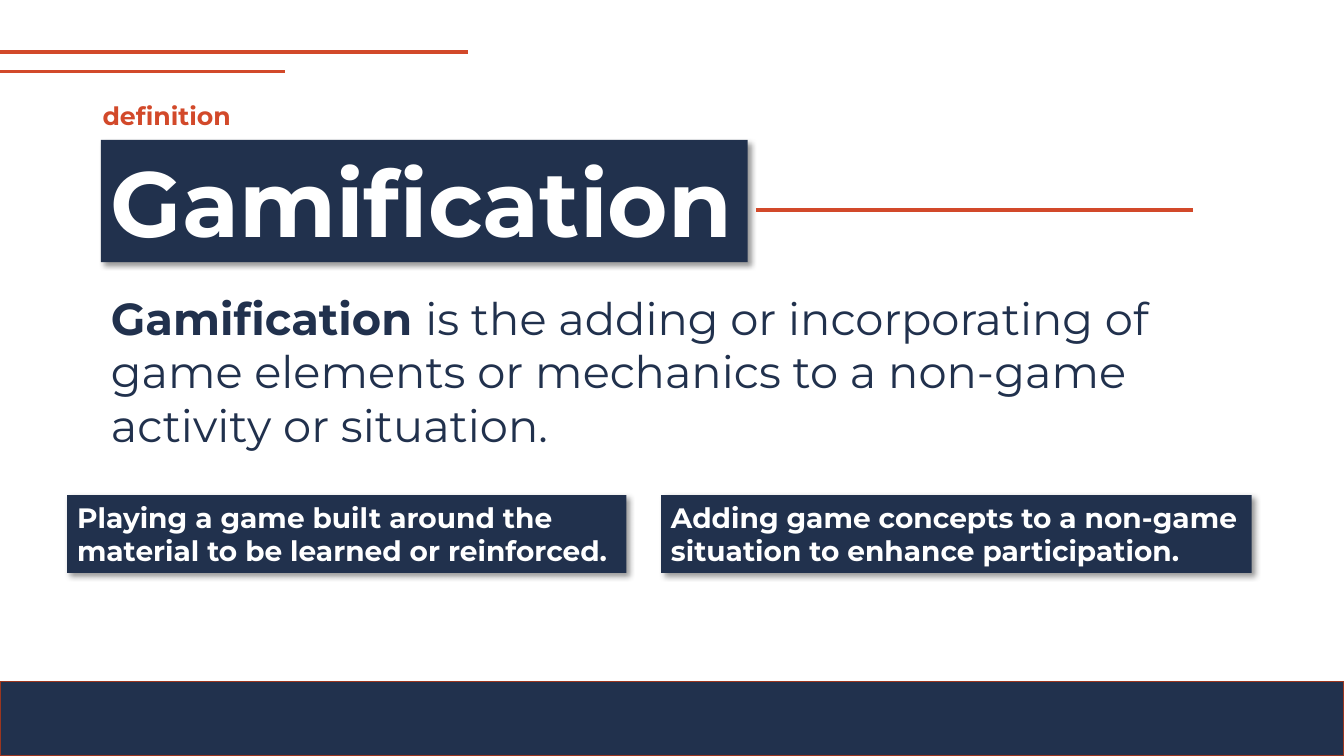
from lxml import etree
from pptx import Presentation
from pptx.dml import color
from pptx.enum import shapes, text
from pptx.oxml import ns
from pptx.util import Pt

NAVY, RED, RUST, WHITE = "21314D", "D2492A", "9B361F", "FFFFFF"
FONT = "Montserrat"


def rgb(code):
    return color.RGBColor.from_string(code)


def place(shape, box):
    shape.left, shape.top, shape.width, shape.height = (Pt(n) for n in box)


def write(shape, parts, size, tone):
    """Fill a shape with one paragraph; parts are (wording, bold) pairs."""
    frame = shape.text_frame
    frame.word_wrap = True
    frame.auto_size = text.MSO_AUTO_SIZE.NONE
    frame.vertical_anchor = text.MSO_ANCHOR.TOP
    para = frame.paragraphs[0]
    para.alignment = text.PP_ALIGN.LEFT
    para.space_before = Pt(0)
    para.line_spacing = 1.0
    for words, bold in parts:
        run = para.add_run()
        run.text = words
        run.font.name, run.font.size, run.font.bold = FONT, Pt(size), bold
        run.font.color.rgb = rgb(tone)


def paint(shape, fill):
    shape.fill.solid()
    shape.fill.fore_color.rgb = rgb(fill)
    shape.line.fill.background()
    shape.shadow.inherit = False


def shade(shape):
    """Add a soft shadow towards the lower right."""
    effects = shape._element.spPr.find(ns.qn("a:effectLst"))
    outer = etree.SubElement(effects, ns.qn("a:outerShdw"), blurRad=str(Pt(4)),
                             dist=str(Pt(3)), dir="2700000", algn="tl", rotWithShape="0")
    black = etree.SubElement(outer, ns.qn("a:srgbClr"), val="000000")
    etree.SubElement(black, ns.qn("a:alpha"), val="40000")


def panel(shape, words, size):
    paint(shape, NAVY)
    shade(shape)
    write(shape, [(words, True)], size, WHITE)


def block(slide, box):
    return slide.shapes.add_shape(shapes.MSO_SHAPE.RECTANGLE, *(Pt(n) for n in box))


def rule(slide, left, right, y, width):
    line = slide.shapes.add_connector(shapes.MSO_CONNECTOR.STRAIGHT,
                                      Pt(left), Pt(y), Pt(right), Pt(y))
    line.line.color.rgb = rgb(RED)
    line.line.width = Pt(width)
    etree.SubElement(line._element.spPr, ns.qn("a:effectLst"))


def main():
    deck = Presentation()
    deck.slide_width, deck.slide_height = Pt(960), Pt(540)
    slide = deck.slides.add_slide(deck.slide_layouts[1])
    title, body = slide.placeholders

    # Footer bar and top rules
    bar = block(slide, (0, 486.7, 960, 53.3))
    paint(bar, NAVY)
    bar.line.color.rgb = rgb(RUST)
    bar.line.width = Pt(1)
    rule(slide, 0, 334, 37.2, 2.5)
    rule(slide, 0, 203.6, 51.3, 2)

    # Label, title and the rule beside it
    label = slide.shapes.add_textbox(Pt(66.2), Pt(68.4), Pt(108), Pt(29))
    write(label, [("definition", True)], 18, RED)
    place(title, (72, 99.9, 462, 87.4))
    panel(title, "Gamification", 66)
    rule(slide, 540, 852, 150, 2.25)

    # Definition, without a bullet
    place(body, (72, 203.8, 780, 124))
    props = body.text_frame.paragraphs[0]._p.get_or_add_pPr()
    props.set("marL", "0")
    props.set("indent", "0")
    etree.SubElement(props, ns.qn("a:buNone"))
    write(body, [("Gamification ", True),
                 ("is the adding or incorporating of game elements or mechanics "
                  "to a non-game activity or situation.", False)], 32, NAVY)

    # Two callouts
    for left, width, words in (
            (48, 399.4, "Playing a game built around the material to be learned or reinforced."),
            (472.2, 421.9, "Adding game concepts to a non-game situation to enhance participation.")):
        panel(block(slide, (left, 353.6, width, 55.7)), words, 20)

    deck.save("out.pptx")


if __name__ == "__main__":
    main()
